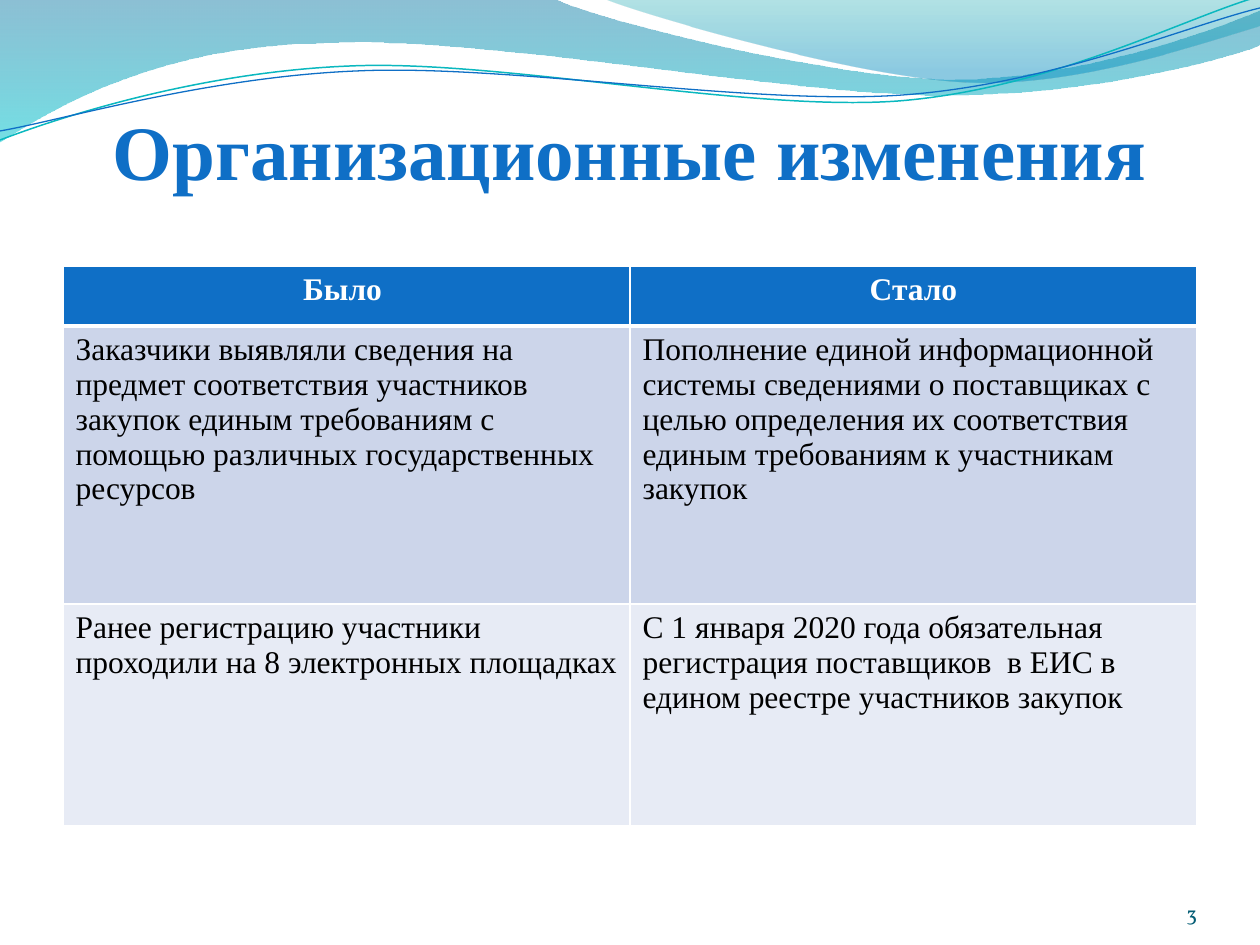
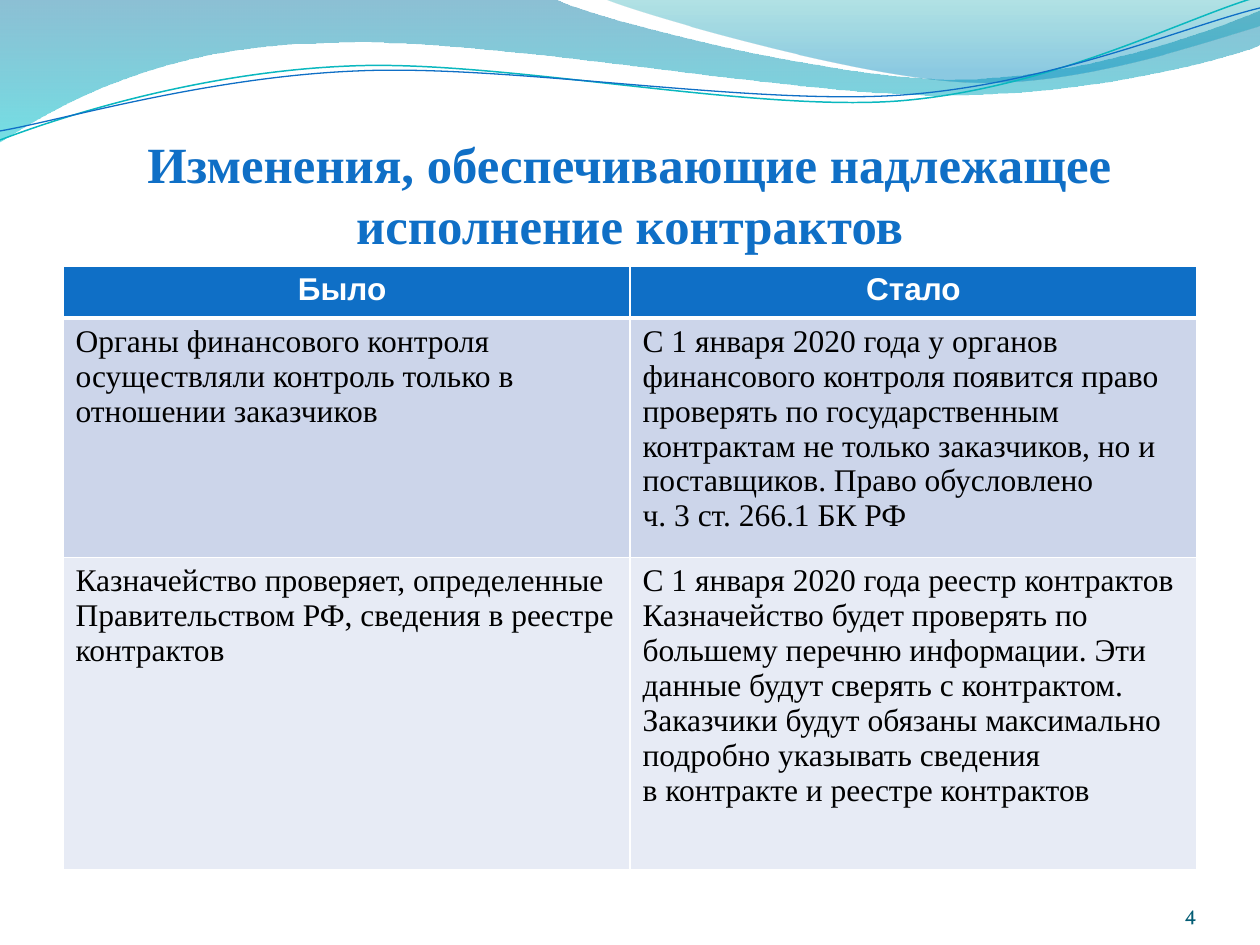
from lxml.etree import SubElement, Element
from pptx import Presentation
from pptx.dml.color import RGBColor
from pptx.enum.text import MSO_ANCHOR, PP_ALIGN
from pptx.oxml.ns import qn
from pptx.util import Pt

EMU_PER_PX = 914400 / 126
NO_BREAK_SPACE = chr(160)
SERIF, SANS, NUMBER_FONT = "Times New Roman", "Arial", "Vollkorn"
BLUE, TEAL, NUMBER_COLOR = "0F6FC6", "0AB8BF", "045D75"
WHITE, BLACK = "FFFFFF", "000000"
ROW_FILLS = (BLUE, "CCD5EA", "E7EBF5")

SLIDE_SIZE = (1260, 945)
TITLE_BOX = (63, 97, 1134, 158)
NUMBER_BOX = (1092, 876, 105, 50)
TABLE_LEFT, TABLE_TOP, TABLE_WIDTH = 63, 266, 1134

# A path is a start point, then segments: one point is a line, three points a Bezier curve.
# Gradient stops are (position, colour, opacity in percent), from top to bottom.
WAVES = [
    {"path": [(0, 0), [(554, -1)],
              [(600, 21), (837, 79), (955, 79)], [(1075, 79), (1207, 33), (1260, 11)],
              [(1261, 45)],
              [(1239, 55), (1096, 96), (940, 95)], [(784, 95), (481, 35), (324, 43)],
              [(163, 45), (58, 105), (-1, 142)]],
     "stops": [(0, "0074A1", 45), (1, "00C6CF", 55)]},
    {"path": [(604, -1), [(638, 14), (859, 78), (969, 82)],
              [(1079, 87), (1211, 40), (1260, 26)], [(1260, 0)]],
     "stops": [(0, "00A1A9", 30), (0.8, "008BBF", 45)]},
    {"path": [(0, 140), [(60, 117), (199, 72), (349, 66)],
              [(498, 59), (747, 112), (898, 101)], [(1050, 89), (1182, 19), (1257, -3)]],
     "line": (TEAL, 0.85)},
    {"path": [(0, 131), [(59, 121), (207, 77), (357, 71)],
              [(508, 64), (752, 106), (903, 95)], [(1053, 84), (1186, 26), (1260, 8)]],
     "line": (BLUE, 0.75)},
]

# In the table texts "~" stands for a space that does not break.
# Rows grow with their text; last_margin is the space under the text of the last row.
SLIDES = [
    {"number": "3",
     "title": "Организационные изменения",
     "title_size": 44, "title_anchor": MSO_ANCHOR.TOP,
     "header_font": SERIF,
     "row_heights": (60, 278, 222), "last_margin": 6,
     "rows": [
         ("Было ", "Стало"),
         ("Заказчики выявляли сведения на предмет соответствия участников закупок "
          "единым требованиям с помощью различных государственных ресурсов",
          "Пополнение единой информационной системы сведениями о поставщиках с целью "
          "определения их соответствия единым требованиям к участникам закупок"),
         ("Ранее регистрацию участники проходили на 8 электронных площадках",
          "С 1 января 2020 года обязательная регистрация поставщиков  в ЕИС в едином "
          "реестре участников закупок"),
     ]},
    {"number": "4",
     "title": "Изменения, обеспечивающие надлежащее исполнение контрактов",
     "title_size": 29, "title_anchor": MSO_ANCHOR.BOTTOM,
     "header_font": SANS,
     "row_heights": (52, 52, 52), "last_margin": 41,
     "rows": [
         ("Было ", "Стало"),
         ("Органы финансового контроля  осуществляли контроль только в отношении заказчиков",
          "С~1 января 2020 года у~органов финансового контроля появится право проверять "
          "по~государственным контрактам не только заказчиков, но и поставщиков. "
          "Право обусловлено\nч. 3 ст. 266.1 БК РФ"),
         ("Казначейство проверяет, определенные Правительством РФ, сведения в реестре "
          "контрактов",
          "С 1 января 2020 года реестр контрактов Казначейство будет проверять по большему "
          "перечню информации. Эти данные будут сверять с~контрактом. Заказчики будут "
          "обязаны максимально подробно указывать сведения в~контракте и реестре контрактов"),
     ]},
]


def px(*lengths):
    return [round(length * EMU_PER_PX) for length in lengths]


def rgb(color):
    return RGBColor.from_string(color)


def write_text(text_frame, text, size, font, color, bold=False, align=None):
    text_frame.text = text
    for paragraph in text_frame.paragraphs:
        paragraph.alignment = align
        for run in paragraph.runs:
            run.font.size, run.font.name, run.font.bold = Pt(size), font, bold
            run.font.color.rgb = rgb(color)


def add_text_box(slide, box, text, anchor, top_inset=0, **style):
    text_frame = slide.shapes.add_textbox(*px(*box)).text_frame
    text_frame.word_wrap = True
    text_frame.vertical_anchor = anchor
    text_frame.margin_left = text_frame.margin_right = text_frame.margin_bottom = 0
    text_frame.margin_top = px(top_inset)[0]
    write_text(text_frame, text, **style)


def bend(shape, segments):
    """Join each three-point segment of the freeform into one Bezier curve."""
    lines = list(shape._element.iter(qn("a:lnTo")))
    for segment in segments:
        first, *others = lines[:len(segment)]
        del lines[:len(segment)]
        if others:
            first.tag = qn("a:cubicBezTo")
            for line in others:
                first.append(line[0])
                line.getparent().remove(line)


def add_curve(slide, path, closed):
    start, *segments = path
    builder = slide.shapes.build_freeform(*px(*start))
    builder.add_line_segments([px(*point) for segment in segments for point in segment],
                              close=closed)
    shape = builder.convert_to_shape()
    shape.shadow.inherit = False
    bend(shape, segments)
    return shape


def add_wave(slide, wave):
    filled = "stops" in wave
    shape = add_curve(slide, wave["path"], closed=filled)
    if not filled:
        color, width = wave["line"]
        shape.fill.background()
        shape.line.color.rgb = rgb(color)
        shape.line.width = Pt(width)
        return
    shape.fill.gradient()
    shape.fill.gradient_angle = 270
    for stop, (position, color, _) in zip(shape.fill.gradient_stops, wave["stops"]):
        stop.position = position
        stop.color.rgb = rgb(color)
    color_elements = shape._element.spPr.iter(qn("a:srgbClr"))
    for element, (_, _, opacity) in zip(color_elements, wave["stops"]):
        SubElement(element, qn("a:alpha"), val=str(opacity * 1000))
    shape.line.fill.background()


def set_borders(cell, top, bottom):
    """Draw white cell borders; the sides are always 1 pt wide."""
    properties = cell._tc.get_or_add_tcPr()
    for index, (side, width) in enumerate((("L", 1), ("R", 1), ("T", top), ("B", bottom))):
        line = Element(qn("a:ln" + side), w=str(Pt(width)))
        SubElement(SubElement(line, qn("a:solidFill")), qn("a:srgbClr"), val=WHITE)
        properties.insert(index, line)


def add_comparison(slide, content):
    rows, heights = content["rows"], content["row_heights"]
    box = px(TABLE_LEFT, TABLE_TOP, TABLE_WIDTH, sum(heights))
    table = slide.shapes.add_table(len(rows), len(rows[0]), *box).table
    for row_index, (texts, height) in enumerate(zip(rows, heights)):
        table.rows[row_index].height = px(height)[0]
        header = row_index == 0
        for column_index, text in enumerate(texts):
            cell = table.cell(row_index, column_index)
            cell.fill.solid()
            cell.fill.fore_color.rgb = rgb(ROW_FILLS[row_index])
            set_borders(cell, top=3 if row_index == 1 else 1, bottom=3 if header else 1)
            if row_index == len(rows) - 1:
                cell.margin_bottom = px(content["last_margin"])[0]
            write_text(cell.text_frame, text.replace("~", NO_BREAK_SPACE), 18,
                       content["header_font"] if header else SERIF,
                       WHITE if header else BLACK, bold=header,
                       align=PP_ALIGN.CENTER if header else None)


def add_slide(presentation, content):
    slide = presentation.slides.add_slide(presentation.slide_layouts[6])
    for wave in WAVES:
        add_wave(slide, wave)
    add_text_box(slide, TITLE_BOX, content["title"], content["title_anchor"], top_inset=7,
                 size=content["title_size"], font=SERIF, color=BLUE, bold=True,
                 align=PP_ALIGN.CENTER)
    add_comparison(slide, content)
    add_text_box(slide, NUMBER_BOX, content["number"], MSO_ANCHOR.BOTTOM,
                 size=12, font=NUMBER_FONT, color=NUMBER_COLOR, align=PP_ALIGN.RIGHT)


def main():
    presentation = Presentation()
    presentation.slide_width, presentation.slide_height = px(*SLIDE_SIZE)
    for content in SLIDES:
        add_slide(presentation, content)
    presentation.save("out.pptx")


if __name__ == "__main__":
    main()
